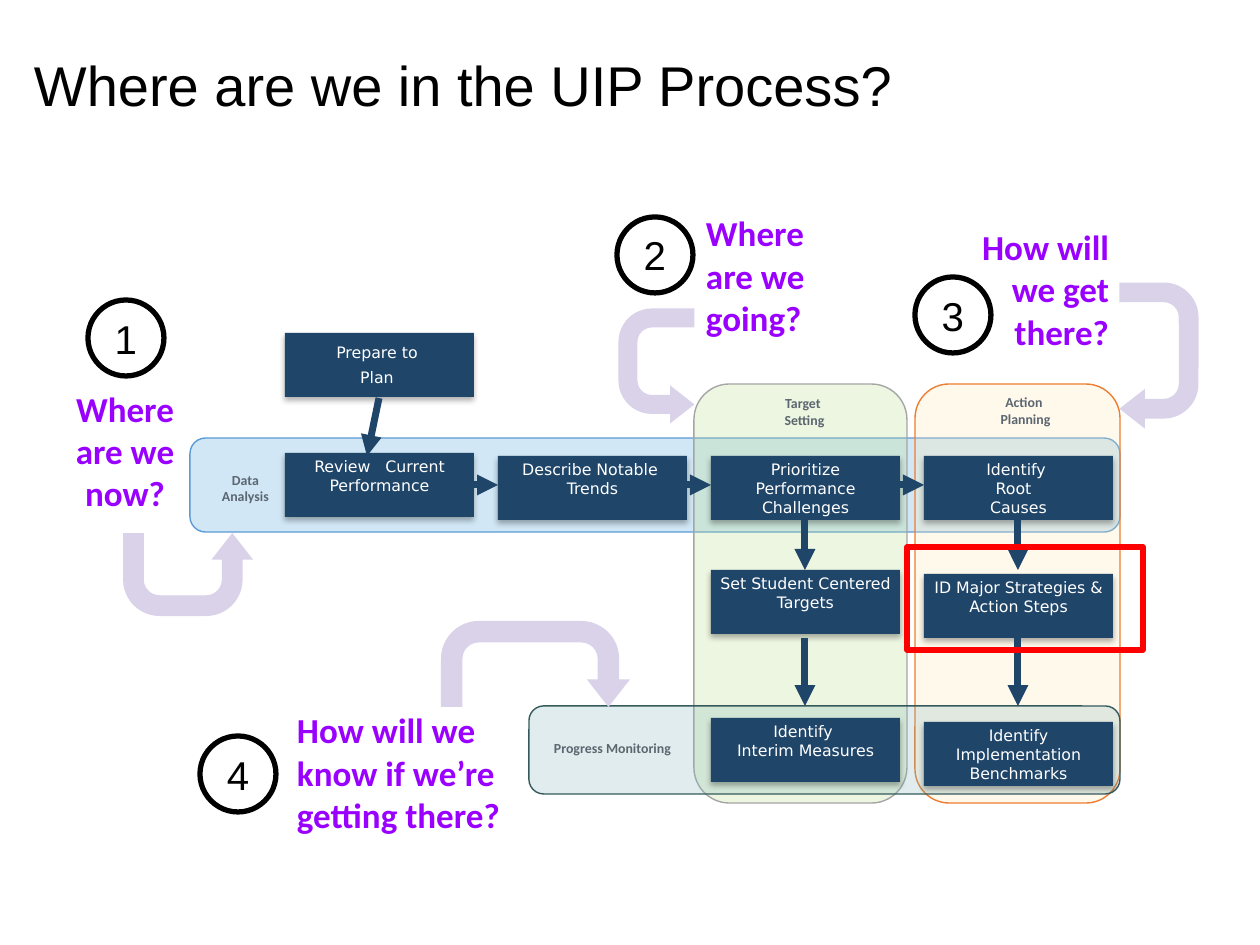
import pptx
import pptx.util
import pptx.dml.color
import pptx.enum.shapes
import pptx.enum.text
import pptx.oxml
import pptx.oxml.ns

SCALE = 914400 / 126
KIND = pptx.enum.shapes.MSO_SHAPE
ALIGN = pptx.enum.text.PP_ALIGN
ANCHOR = pptx.enum.text.MSO_ANCHOR
NS = pptx.oxml.ns.nsdecls("a")
HUES = {
    "ink": "000000", "white": "FFFFFF", "navy": "1F4569", "gray": "5C6670",
    "ask": "9900FF", "turn": "D9D2E9", "mark": "FF0000",
    "data": "D1E7F5", "data edge": "5B9BD5", "plan": "FFE8B5", "plan edge": "ED7D31",
    "goal": "B9DC8A", "goal edge": "A5A5A5", "watch": "85B7B9", "watch edge": "345A5B",
}
STEP_W, STEP_H = 189, 64
COLS = [285 + 213 * i for i in range(4)]


def px(*vals):
    return [pptx.util.Emu(round(v * SCALE)) for v in vals]


def color(name):
    return pptx.dml.color.RGBColor.from_string(HUES[name])


def write(shape, words, font, size, hue, bold=False, align=ALIGN.CENTER,
          anchor=ANCHOR.TOP, inset=(8, 4)):
    """Fill a shape with text; a newline starts a paragraph, \\v breaks a line."""
    frame = shape.text_frame
    frame.text = words
    frame.word_wrap = True
    frame.vertical_anchor = anchor
    frame.margin_left = frame.margin_right = px(inset[0])[0]
    frame.margin_top = frame.margin_bottom = px(inset[1])[0]
    for para in frame.paragraphs:
        para.alignment = align
        for run in para.runs:
            run.font.name = font
            run.font.size = pptx.util.Pt(size)
            run.font.bold = bold
            run.font.color.rgb = color(hue)


def draw(slide, kind, box, fill=None, edge=None, width=0.79, alpha=None):
    shape = slide.shapes.add_shape(kind, *px(*box))
    shape.shadow.inherit = False
    if fill:
        shape.fill.solid()
        shape.fill.fore_color.rgb = color(fill)
        if alpha:
            tint = shape.element.spPr.find(".//" + pptx.oxml.ns.qn("a:srgbClr"))
            tint.append(pptx.oxml.parse_xml(f'<a:alpha {NS} val="{alpha * 1000}"/>'))
    else:
        shape.fill.background()
    if edge:
        shape.line.color.rgb = color(edge)
        shape.line.width = pptx.util.Pt(width)
    else:
        shape.line.fill.background()
    return shape


def head(slide, box, words):
    title = slide.shapes.title
    title.left, title.top, title.width, title.height = px(*box)
    write(title, words, "Arial", 32, "ink", align=ALIGN.LEFT,
          anchor=ANCHOR.MIDDLE, inset=(0, 0))
    title.text_frame.auto_size = pptx.enum.text.MSO_AUTO_SIZE.NONE


def band(slide, box, hue, words, label, alpha=None, anchor=ANCHOR.TOP):
    """Draw a phase band; label is a box relative to the band."""
    draw(slide, KIND.ROUNDED_RECTANGLE, box, hue, hue + " edge", alpha=alpha)
    x, y, w, h = label
    tag = slide.shapes.add_textbox(*px(box[0] + x, box[1] + y, w, h))
    write(tag, words, "Calibri", 7.9, "gray", bold=True, anchor=anchor)


def step(slide, x, y, words, anchor=ANCHOR.TOP):
    shape = draw(slide, KIND.RECTANGLE, (x, y, STEP_W, STEP_H), "navy")
    shade = shape.element.spPr.find(pptx.oxml.ns.qn("a:effectLst"))
    shade.append(pptx.oxml.parse_xml(
        f'<a:outerShdw {NS} blurRad="44450" dist="27940" dir="5400000" rotWithShape="0">'
        '<a:srgbClr val="000000"><a:alpha val="31000"/></a:srgbClr></a:outerShdw>'))
    write(shape, words, "DejaVu Sans", 9, "white", anchor=anchor)
    return shape


def arrow(slide, *ends):
    link = slide.shapes.add_connector(
        pptx.enum.shapes.MSO_CONNECTOR.STRAIGHT, *px(*ends))
    link.line.color.rgb = color("navy")
    link.line.width = pptx.util.Pt(4)
    link.line._get_or_add_ln().append(
        pptx.oxml.parse_xml(f'<a:tailEnd {NS} type="triangle"/>'))
    link.element.spPr.append(pptx.oxml.parse_xml(f"<a:effectLst {NS}/>"))


def ask(slide, at, num, words, align, text, ring, turn, angle=0, flip=False):
    """Draw a guiding question; text, ring and turn are relative to at."""
    def place(x, y, w, h):
        return at[0] + x, at[1] + y, w, h

    note = slide.shapes.add_textbox(*px(*place(*text)))
    write(note, words, "Calibri", 20, "ask", bold=True, align=align, inset=(12, 12))
    bend = draw(slide, KIND.U_TURN_ARROW, place(*turn), "turn")
    for i, val in enumerate((0.25, 0.25, 0.32, 0.44, 1)):
        bend.adjustments[i] = val
    bend.rotation = angle
    if flip:
        bend.element.spPr.xfrm.set("flipH", "1")
    disk = draw(slide, KIND.OVAL, place(*ring, 76, 76), edge="ink", width=3)
    write(disk, num, "Arial", 23, "ink", anchor=ANCHOR.MIDDLE, inset=(12, 12))


def bands(slide):
    mid = ANCHOR.MIDDLE
    band(slide, (190, 438, 930, 94), "data", "Data\nAnalysis", (0, 18, 111, 64), anchor=mid)
    band(slide, (915, 384, 205, 419), "plan", "Action \nPlanning", (40, 6, 141, 40), 25)
    band(slide, (694, 384, 213, 419), "goal", "Target \nSetting", (38, 7, 145, 53), 25)
    band(slide, (529, 706, 591, 88), "watch", "Progress Monitoring",
         (9, 10, 149, 64), 25, mid)


def flow(slide):
    first = step(slide, COLS[0], 333, "Prepare to \nPlan ", ANCHOR.MIDDLE)
    first.text_frame.paragraphs[1].space_before = pptx.util.Pt(3.4)
    for col, y, words in (
        (0, 453, "Review   Current Performance"),
        (1, 456, "Describe Notable \vTrends"),
        (2, 456, "Prioritize Performance Challenges"),
        (3, 456, "Identify \vRoot  \vCauses"),
        (2, 570, "Set Student Centered Targets"),
        (3, 574, "ID Major Strategies & Action Steps"),
        (2, 718, "Identify \vInterim Measures"),
        (3, 722, "Identify Implementation Benchmarks"),
    ):
        step(slide, COLS[col], y, words)
    arrow(slide, 379, 398, 367, 456)
    for x in COLS[1:]:
        arrow(slide, x - 32, 485, x, 485)
    for x in COLS[2:]:
        for top, end in ((520, 570), (638, 706)):
            arrow(slide, x + 94, top, x + 94, end)


def main():
    deck = pptx.Presentation()
    deck.slide_width, deck.slide_height = px(1260, 945)
    slide = deck.slides.add_slide(deck.slide_layouts[5])
    head(slide, (34, 45, 1096, 78), "Where are we in the UIP Process?")
    bands(slide)
    flow(slide)
    ask(slide, (60, 300), "1", "Where are we now?", ALIGN.CENTER,
        (0, 75, 130, 152), (28, 0), (63, 233, 130, 83), 180, True)
    ask(slide, (599, 200), "2", "Where are we going?", ALIGN.LEFT,
        (95, 0, 130, 152), (18, 17), (0, 128, 115, 76), 270, True)
    ask(slide, (915, 214), "3", "How will we get there?", ALIGN.RIGHT,
        (48, 0, 158, 152), (0, 63), (171, 102, 146, 79), 90)
    ask(slide, (200, 621), "4", "How will we know if we’re getting there?", ALIGN.LEFT,
        (85, 76, 236, 152), (0, 115), (241, 0, 189, 86))
    draw(slide, KIND.RECTANGLE, (907, 547, 236, 103), edge="mark", width=3)
    deck.save("out.pptx")


if __name__ == "__main__":
    main()
